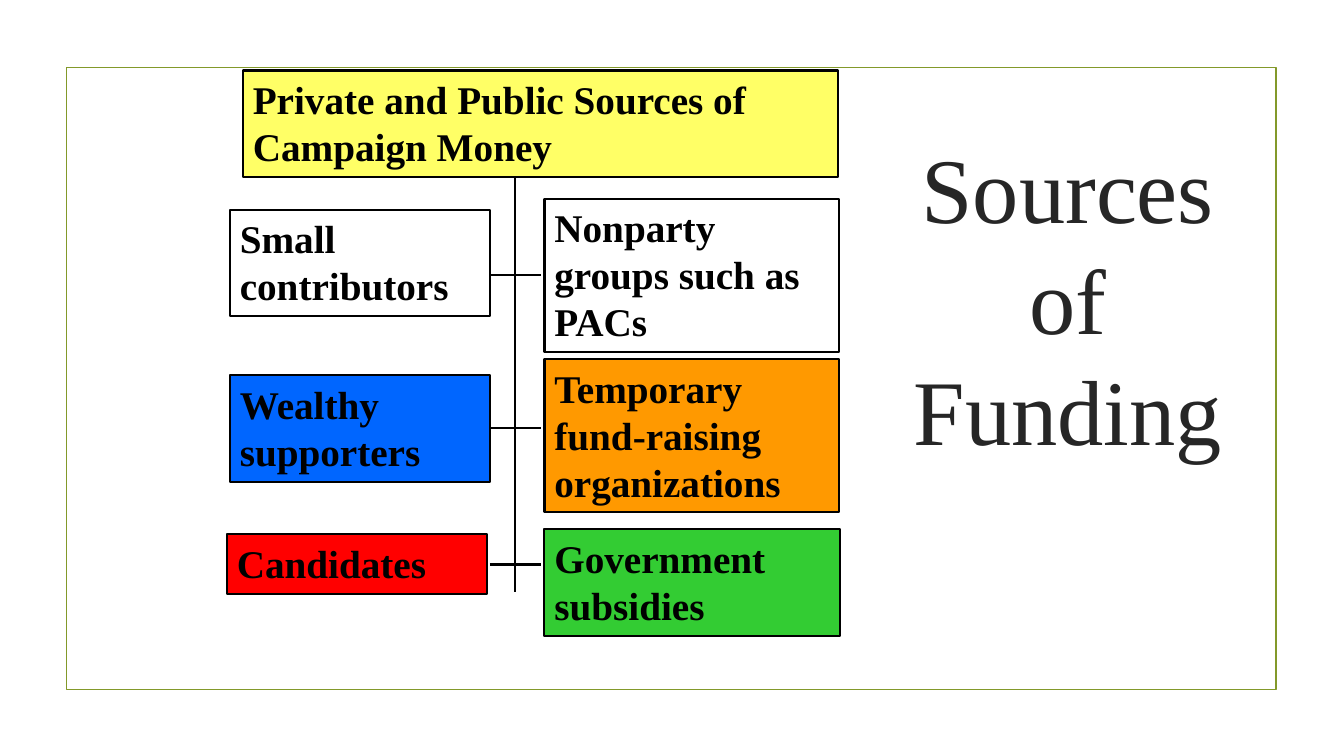
from dataclasses import dataclass

from lxml.etree import SubElement
from pptx import Presentation
from pptx.dml.color import RGBColor
from pptx.enum.shapes import MSO_CONNECTOR, MSO_SHAPE
from pptx.enum.text import MSO_ANCHOR, MSO_AUTO_SIZE as AutoSize, PP_ALIGN
from pptx.oxml.ns import qn
from pptx.util import Inches, Pt


@dataclass(frozen=True)
class Theme:
    font: str = "Times New Roman"
    title_size: int = 66
    box_size: int = 28
    title: str = "262626"
    ink: str = "000000"
    frame: str = "83992A"
    white: str = "FFFFFF"
    yellow: str = "FFFF66"
    blue: str = "0066FF"
    orange: str = "FF9900"
    red: str = "FF0000"
    green: str = "33CC33"
    frame_width: float = 1.25
    line_width: float = 1.5


@dataclass(frozen=True)
class Box:
    text: str
    left: float
    top: float
    width: float
    height: float
    fill: str


THEME = Theme()
LEFT_X, RIGHT_X = 2.28, 5.4
LEFT_W, RIGHT_W = 2.58, 2.92
ONE_LINE, TWO_LINES, THREE_LINES = 0.59, 1.06, 1.52

BOXES = [
    Box("Private and Public Sources of Campaign Money",
        2.41, 0.7, 5.9, TWO_LINES, THEME.yellow),
    Box("Small contributors", LEFT_X, 2.08, LEFT_W, TWO_LINES, THEME.white),
    Box("Wealthy supporters", LEFT_X, 3.72, LEFT_W, TWO_LINES, THEME.blue),
    Box("Candidates", 2.25, 5.3, LEFT_W, ONE_LINE, THEME.red),
    Box("Nonparty groups such as PACs",
        RIGHT_X, 1.97, RIGHT_W, THREE_LINES, THEME.white),
    Box("Temporary fund-raising organizations",
        RIGHT_X, 3.56, RIGHT_W, THREE_LINES, THEME.orange),
    Box("Government subsidies", RIGHT_X, 5.25, 2.93, TWO_LINES, THEME.green),
]
SPINE_X, SPINE_TOP, SPINE_BOTTOM = 5.11, 1.65, 5.87
RUNG_LEFT, RUNG_RIGHT = 4.86, 5.37
RUNG_YS = [2.73, 4.25, 5.6]


def set_text(s, text: str, *, size: float, color: str, bold: bool = False,
             align=PP_ALIGN.LEFT, anchor=MSO_ANCHOR.TOP, fit=AutoSize.NONE) -> None:
    tf = s.text_frame
    tf.word_wrap = True
    tf.auto_size = fit
    tf.vertical_anchor = anchor
    p = tf.paragraphs[0]
    p.alignment = align
    r = p.add_run()
    r.text = text
    r.font.name = THEME.font
    r.font.size = Pt(size)
    r.font.bold = bold
    r.font.color.rgb = RGBColor.from_string(color)


def set_line(s, color: str, width: float) -> None:
    s.line.color.rgb = RGBColor.from_string(color)
    s.line.width = Pt(width)


def add_rect(slide, left: float, top: float, width: float, height: float):
    s = slide.shapes.add_shape(MSO_SHAPE.RECTANGLE, Inches(left), Inches(top),
                               Inches(width), Inches(height))
    s.shadow.inherit = False
    return s


def add_frame(slide) -> None:
    s = add_rect(slide, 0.66, 0.67, 12, 6.17)
    s.fill.background()
    set_line(s, THEME.frame, THEME.frame_width)


def add_title(slide, text: str) -> None:
    s = slide.shapes.title
    s.left, s.top, s.width, s.height = map(Inches, (8.95, 2.68, 3.28, 0.55))
    set_text(s, text, size=THEME.title_size, color=THEME.title,
             align=PP_ALIGN.CENTER, anchor=MSO_ANCHOR.MIDDLE)


def add_box(slide, box: Box) -> None:
    s = add_rect(slide, box.left, box.top, box.width, box.height)
    s.fill.solid()
    s.fill.fore_color.rgb = RGBColor.from_string(box.fill)
    set_line(s, THEME.ink, THEME.line_width)
    set_text(s, box.text, size=THEME.box_size, color=THEME.ink, bold=True,
             fit=AutoSize.SHAPE_TO_FIT_TEXT)


def add_line(slide, x1: float, y1: float, x2: float, y2: float) -> None:
    s = slide.shapes.add_connector(MSO_CONNECTOR.STRAIGHT, Inches(x1), Inches(y1),
                                   Inches(x2), Inches(y2))
    set_line(s, THEME.ink, THEME.line_width)
    SubElement(s._element.spPr, qn("a:effectLst"))


def main() -> None:
    prs = Presentation()
    prs.slide_width, prs.slide_height = Inches(13.33), Inches(7.5)
    slide = prs.slides.add_slide(prs.slide_layouts.get_by_name("Title Only"))

    # Frame and title
    add_frame(slide)
    add_title(slide, "Sources of Funding")

    # Tree lines, behind the boxes
    add_line(slide, SPINE_X, SPINE_TOP, SPINE_X, SPINE_BOTTOM)
    for y in RUNG_YS:
        add_line(slide, RUNG_LEFT, y, RUNG_RIGHT, y)

    # Heading box and funding sources
    for box in BOXES:
        add_box(slide, box)

    prs.save("out.pptx")


if __name__ == "__main__":
    main()
